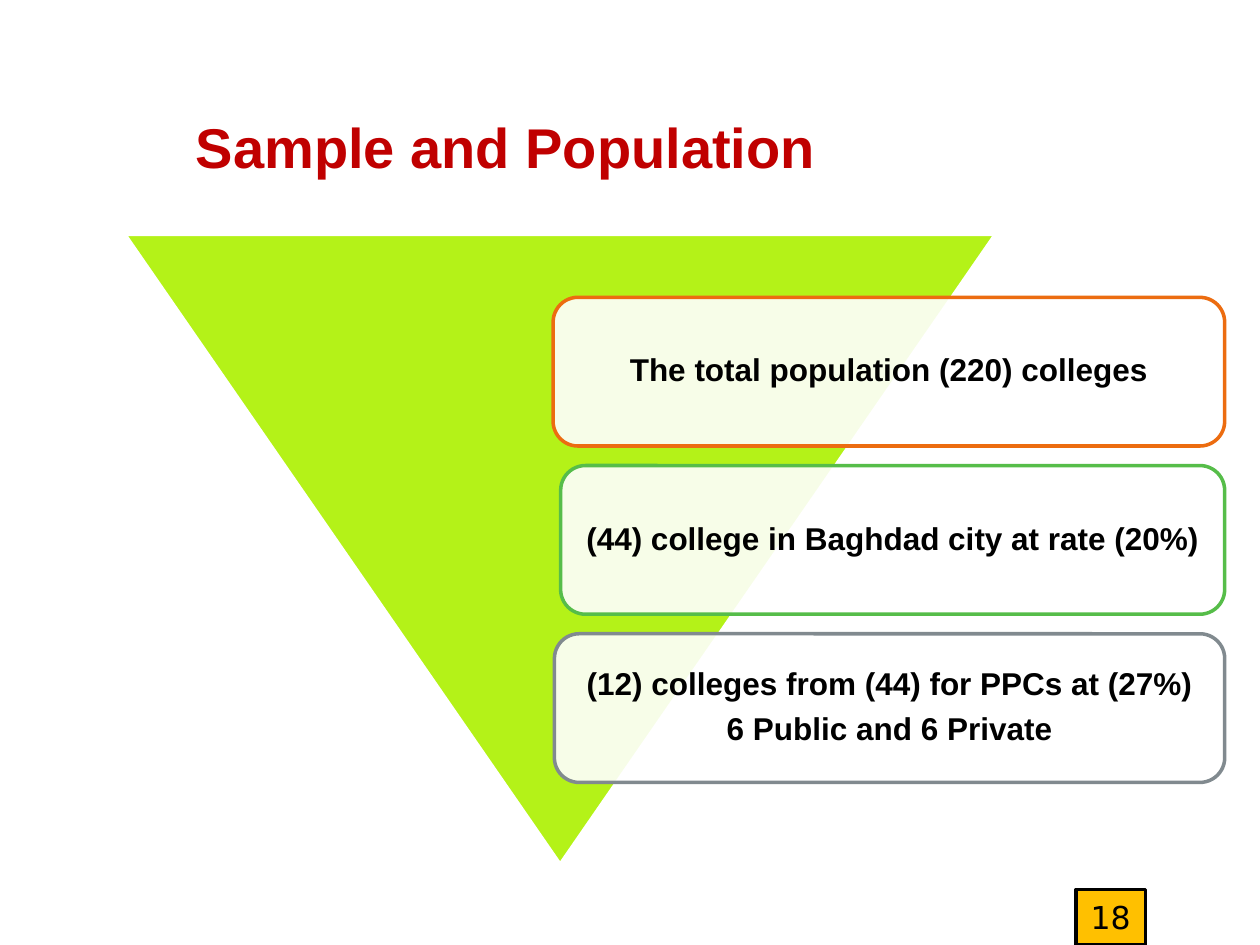
from lxml import etree
from pptx import Presentation
from pptx import util as u
from pptx.dml.color import RGBColor
from pptx.enum import shapes, text
from pptx.oxml.ns import qn

THEME = {
    "font": "Arial", "number_font": "DejaVu Sans",
    "title_size": 32, "body_size": 18, "line_width": 2,
    "title": "C00000", "ink": "000000", "white": "FFFFFF",
    "funnel": "B4F218", "number": "FFC000", "card_opacity": 90,
}

TITLE = "Sample and Population"
PAGE_NUMBER = "18"
# paragraphs, left edge, outline
STAGES = [
    (["The total population (220) colleges"], 4.39, "EC6C10"),
    (["(44) college in Baghdad city at rate (20%)"], 4.45, "56BD49"),
    (["(12) colleges from (44) for PPCs at (27%)", "6 Public and 6 Private"],
     4.4, "818A8F"),
]
CARD_TOP, CARD_RIGHT, CARD_HEIGHT, CARD_STEP = 2.36, 9.72, 1.18, 1.335
CARD_INSET = 0.13


def color(name):
    return RGBColor.from_string(THEME.get(name, name))


def add_box(slide, kind, box, fill, line):
    shape = slide.shapes.add_shape(kind, *map(u.Inches, box))
    shape.shadow.inherit = False
    shape.fill.solid()
    shape.fill.fore_color.rgb = color(fill)
    shape.line.color.rgb = color(line)
    shape.line.width = u.Pt(THEME["line_width"])
    return shape


def set_opacity(shape, percent):
    fill_color = shape._element.spPr.find(qn("a:solidFill"))[0]
    etree.SubElement(fill_color, qn("a:alpha"), val=str(percent * 1000))


def write(shape, lines, size, ink="ink", font="font", bold=True,
          anchor=text.MSO_ANCHOR.MIDDLE):
    frame = shape.text_frame
    frame.word_wrap = True
    frame.vertical_anchor = anchor
    frame.text = "\n".join(lines)
    for paragraph in frame.paragraphs:
        paragraph.alignment = text.PP_ALIGN.CENTER
        for run in paragraph.runs:
            run.font.name = THEME[font]
            run.font.size = u.Pt(THEME[size])
            run.font.bold = bold
            run.font.color.rgb = color(ink)
    return frame


def add_stage(slide, row, lines, left, outline):
    box = (left, CARD_TOP + row * CARD_STEP, CARD_RIGHT - left, CARD_HEIGHT)
    card = add_box(slide, shapes.MSO_SHAPE.ROUNDED_RECTANGLE, box, "white", outline)
    set_opacity(card, THEME["card_opacity"])
    frame = write(card, lines, "body_size")
    frame.margin_left = frame.margin_right = u.Inches(CARD_INSET)
    frame.margin_top = frame.margin_bottom = u.Inches(CARD_INSET)
    for paragraph in frame.paragraphs:
        paragraph.line_spacing = 0.9
        paragraph.space_after = u.Pt(0.35 * THEME["body_size"])


def main():
    presentation = Presentation()
    presentation.slide_width, presentation.slide_height = u.Inches(10), u.Inches(7.5)
    slide = presentation.slides.add_slide(presentation.slide_layouts[6])

    title = slide.shapes.add_textbox(*map(u.Inches, (0.67, 0.84, 6.69, 1.06)))
    write(title, [TITLE], "title_size", "title", anchor=text.MSO_ANCHOR.TOP)

    funnel = add_box(slide, shapes.MSO_SHAPE.ISOSCELES_TRIANGLE,
                     (0.99, 1.86, 6.91, 5), "funnel", "white")
    funnel.rotation = 180

    for row, stage in enumerate(STAGES):
        add_stage(slide, row, *stage)

    number = add_box(slide, shapes.MSO_SHAPE.RECTANGLE,
                     (8.54, 7.06, 0.55, 0.44), "number", "ink")
    write(number, [PAGE_NUMBER], "body_size", font="number_font", bold=False)

    presentation.save("out.pptx")


if __name__ == "__main__":
    main()
